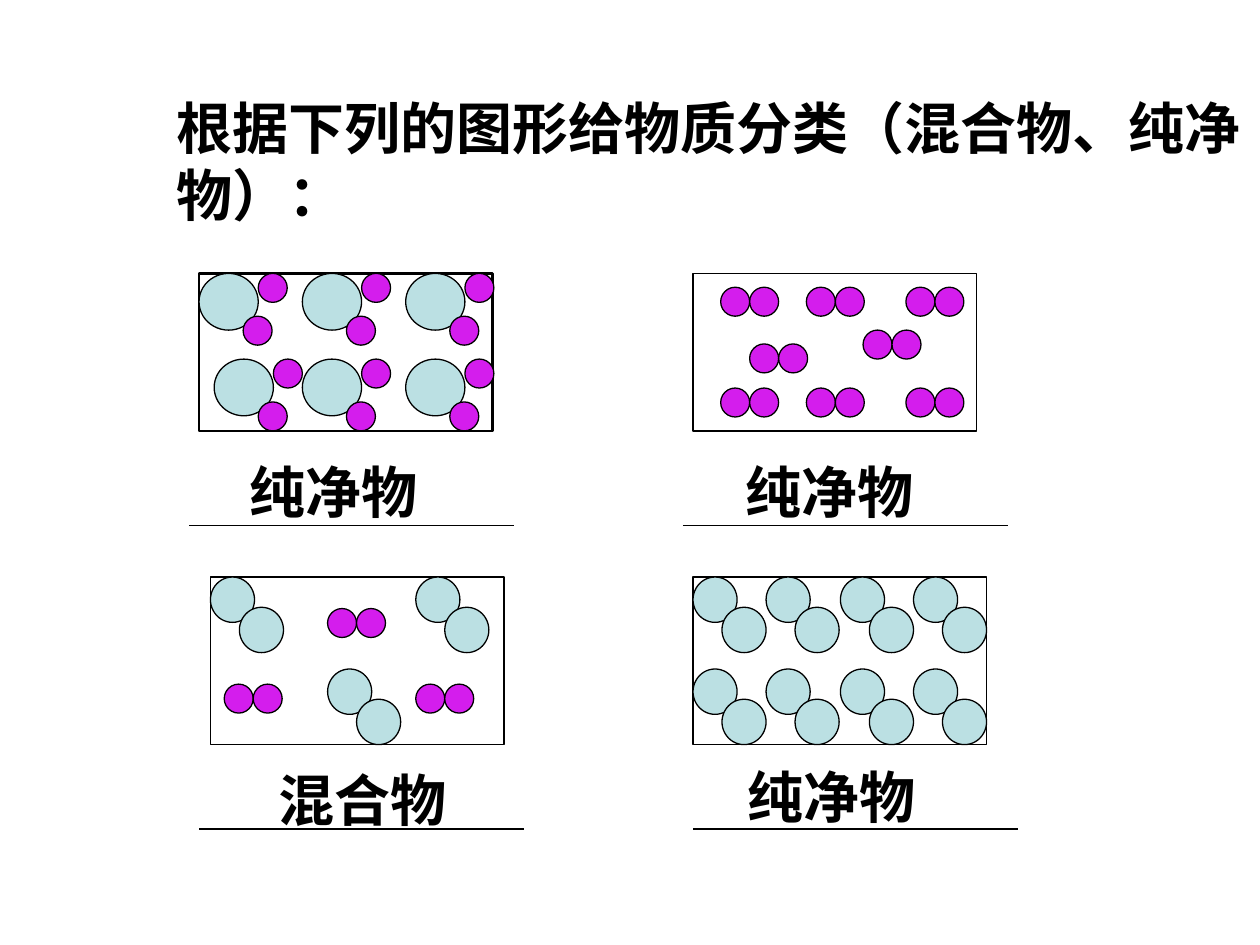
from itertools import product

from pptx import Presentation
from pptx.dml.color import RGBColor
from pptx.enum.shapes import MSO_CONNECTOR, MSO_SHAPE
from pptx.enum.text import MSO_AUTO_SIZE
from pptx.oxml.ns import qn
from pptx.util import Inches, Pt

BLACK = RGBColor(0x00, 0x00, 0x00)
WHITE = RGBColor(0xFF, 0xFF, 0xFF)
BLUE = RGBColor(0xBB, 0xE0, 0xE3)
PINK = RGBColor(0xD4, 0x1D, 0xED)

# Molecules: each atom is dx, dy, width, height, colour
TRIO = [(0, 0, 0.47, 0.45, BLUE), (0.47, 0, 0.23, 0.23, PINK), (0.35, 0.34, 0.23, 0.23, PINK)]
PINK_PAIR = [(0, 0, 0.23, 0.23, PINK), (0.23, 0, 0.23, 0.23, PINK)]
BLUE_PAIR = [(0, 0, 0.35, 0.36, BLUE), (0.23, 0.24, 0.35, 0.36, BLUE)]

# Panels: frame box, frame line width, (molecule, positions) sets
PANELS = [
    ((1.58, 2.17, 2.33, 1.25), 1.5, [
        (TRIO, [(1.58, 2.17), (2.4, 2.17), (3.22, 2.17), (1.7, 2.85), (2.4, 2.85), (3.22, 2.85)])]),
    ((5.5, 2.17, 2.25, 1.25), 0.75, [
        (PINK_PAIR, [*product((5.72, 6.4, 7.19), (2.28, 3.08)), (5.95, 2.73), (6.85, 2.62)])]),
    ((5.5, 4.58, 2.33, 1.33), 0.75, [
        (BLUE_PAIR, list(product((5.5, 6.08, 6.67, 7.25), (4.58, 5.31))))]),
    ((1.67, 4.58, 2.33, 1.33), 0.75, [
        (BLUE_PAIR, [(1.67, 4.58), (3.3, 4.58), (2.6, 5.31)]),
        (PINK_PAIR, [(2.6, 4.83), (1.78, 5.43), (3.3, 5.43)])]),
]

# Answers: text, box, indent
ANSWERS = [
    ("纯净物", (1.08, 3.58, 3.5, 0.63), 0.8),
    ("纯净物", (5.42, 3.58, 3.5, 0.63), 0.4),
    ("混合物", (2.11, 6.03, 3.22, 0.63), 0),
    ("纯净物", (5.33, 6, 3.5, 0.63), 0.5),
]
RULES = [(1.58, 6.58), (1.5, 4.17), (5.42, 4.17), (5.5, 6.58)]
RULE_LENGTH = 2.58


def add_outlined(shapes, kind, box, fill, width=0.75):
    sp = shapes.add_shape(kind, *map(Inches, box))
    sp.shadow.inherit = False
    sp.fill.solid()
    sp.fill.fore_color.rgb = fill
    sp.line.color.rgb = BLACK
    sp.line.width = Pt(width)


def add_text(shapes, text, box, indent=0):
    tf = shapes.add_textbox(*map(Inches, box)).text_frame
    tf.word_wrap = True
    tf.auto_size = MSO_AUTO_SIZE.SHAPE_TO_FIT_TEXT
    tf.margin_left = Inches(0.1 + indent)
    p = tf.paragraphs[0]
    p.text = text
    p.font.name = "Arial"
    p.font.size = Pt(32)
    p.font.bold = True
    p.font.color.rgb = BLACK


prs = Presentation()
prs.slide_width, prs.slide_height = Inches(10), Inches(7.5)
s = prs.slides.add_slide(prs.slide_layouts[6])

add_text(s.shapes, "根据下列的图形给物质分类（混合物、纯净物）：", (1.3, 0.69, 8.92, 1.17))

for frame, line_width, molecule_sets in PANELS:
    panel = s.shapes.add_group_shape().shapes
    add_outlined(panel, MSO_SHAPE.RECTANGLE, frame, WHITE, line_width)
    for molecule, positions in molecule_sets:
        for x, y in positions:
            for dx, dy, w, h, color in molecule:
                add_outlined(panel, MSO_SHAPE.OVAL, (x + dx, y + dy, w, h), color)

for x, y in RULES:
    rule = s.shapes.add_connector(
        MSO_CONNECTOR.STRAIGHT, Inches(x), Inches(y), Inches(x + RULE_LENGTH), Inches(y))
    rule.line.color.rgb = BLACK
    rule.line.width = Pt(0.75)
    spPr = rule._element.spPr
    spPr.append(spPr.makeelement(qn("a:effectLst"), {}))

for text, box, indent in ANSWERS:
    add_text(s.shapes, text, box, indent)

prs.save("out.pptx")
